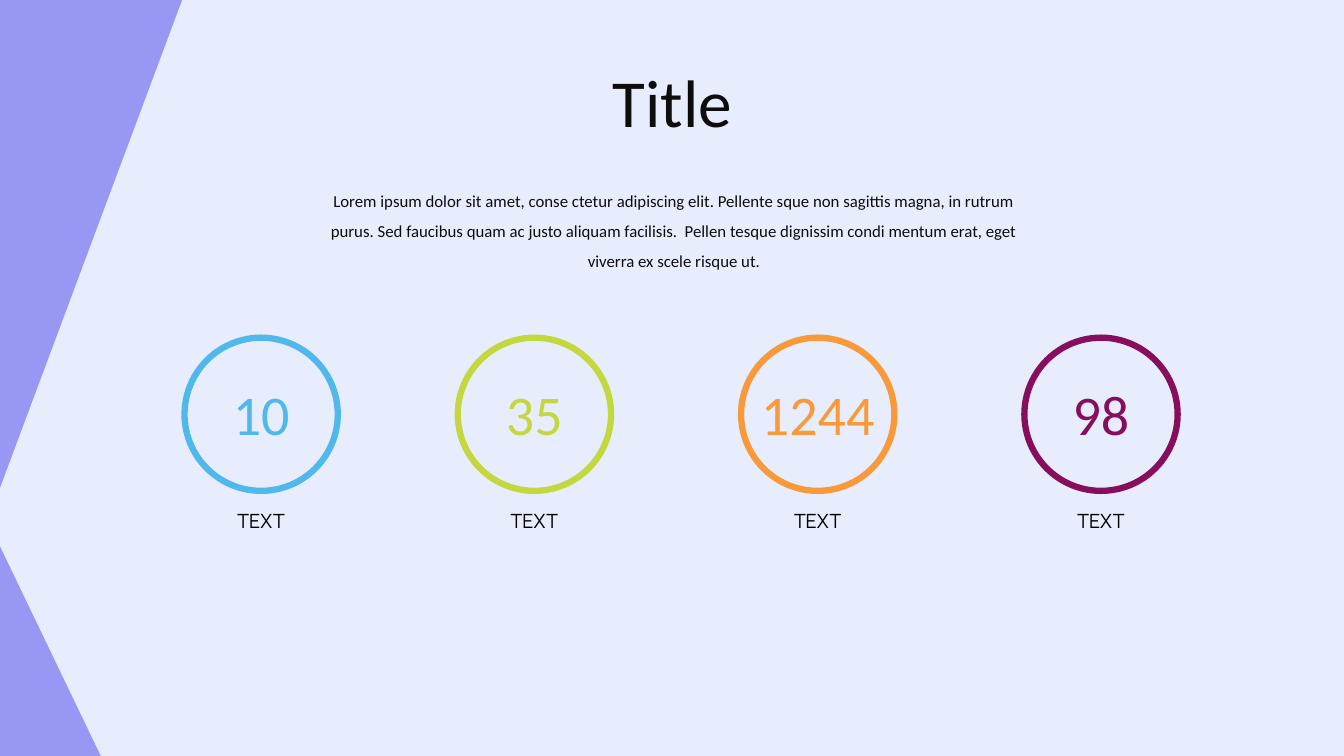
"""Build a title slide with four ringed figures and their labels."""

from dataclasses import dataclass

from pptx import Presentation
from pptx.dml.color import RGBColor
from pptx.enum.shapes import MSO_SHAPE as Preset
from pptx.enum.text import MSO_ANCHOR as Anchor, MSO_AUTO_SIZE as AutoSize, PP_ALIGN as Align
from pptx.shapes.autoshape import Shape
from pptx.slide import Slide
from pptx.util import Inches, Pt


@dataclass(frozen=True)
class Theme:
    background: str = "E7EDFD"
    accent: str = "9898F4"
    ink: str = "0D0D0D"
    label_ink: str = "000000"
    font: str = "Calibri"
    label_font: str = "Manrope"
    title_size: int = 48
    number_size: int = 40
    label_size: int = 14
    body_size: int = 12
    ring_line: float = 4.5


@dataclass(frozen=True)
class Box:
    left: float
    top: float
    width: float
    height: float

    def lengths(self) -> tuple[int, ...]:
        return tuple(Inches(value) for value in (self.left, self.top, self.width, self.height))


@dataclass(frozen=True)
class Figure:
    center: float
    number: str
    color: str
    number_width: float = 1.18
    label: str = "TEXT"


THEME = Theme()
RING_SIZE = 1.52
LABEL_WIDTH = 1.19
FIGURES = (
    Figure(2.59, "10", "51B8EB"),
    Figure(5.3, "35", "C3D83F"),
    Figure(8.11, "1244", "F89A3A", number_width=1.41),
    Figure(10.92, "98", "870E5D"),
)
BODY = (
    "Lorem ipsum dolor sit amet, conse ctetur adipiscing elit. Pellente sque non sagittis magna, "
    "in rutrum purus. Sed faucibus quam ac justo aliquam facilisis.  Pellen tesque dignissim "
    "condi mentum erat, eget viverra ex scele risque ut."
)


def centered_box(center: float, top: float, width: float, height: float) -> Box:
    return Box(center - width / 2, top, width, height)


def write_text(shape: Shape, text: str, *, size: float, color: str = THEME.ink,
               font: str = THEME.font, line_spacing: float = 1.0) -> None:
    frame = shape.text_frame
    frame.word_wrap = True
    frame.auto_size = AutoSize.SHAPE_TO_FIT_TEXT
    frame.vertical_anchor = Anchor.TOP
    frame.text = text
    paragraph = frame.paragraphs[0]
    paragraph.alignment = Align.CENTER
    paragraph.line_spacing = line_spacing
    run_font = paragraph.runs[0].font
    run_font.name = font
    run_font.size = Pt(size)
    run_font.color.rgb = RGBColor.from_string(color)


def add_text(slide: Slide, box: Box, text: str, **text_format) -> None:
    write_text(slide.shapes.add_textbox(*box.lengths()), text, **text_format)


def add_corner(slide: Slide, box: Box, flipped: bool = False) -> None:
    shape = slide.shapes.add_shape(Preset.RIGHT_TRIANGLE, *box.lengths())
    shape.shadow.inherit = False
    shape.fill.solid()
    shape.fill.fore_color.rgb = RGBColor.from_string(THEME.accent)
    shape.line.fill.background()
    if flipped:
        shape.element.spPr.xfrm.set("flipV", "1")


def add_title(slide: Slide, box: Box, text: str) -> None:
    title = slide.shapes.title
    title.left, title.top, title.width, title.height = box.lengths()
    write_text(title, text, size=THEME.title_size)


def add_figure(slide: Slide, figure: Figure) -> None:
    ring_box = centered_box(figure.center, 3.35, RING_SIZE, RING_SIZE)
    ring = slide.shapes.add_shape(Preset.OVAL, *ring_box.lengths())
    ring.shadow.inherit = False
    ring.fill.background()
    ring.line.color.rgb = RGBColor.from_string(figure.color)
    ring.line.width = Pt(THEME.ring_line)
    add_text(slide, centered_box(figure.center, 3.72, figure.number_width, 0.77), figure.number,
             size=THEME.number_size, color=figure.color)
    add_text(slide, centered_box(figure.center, 5, LABEL_WIDTH, 0.34), figure.label,
             size=THEME.label_size, color=THEME.label_ink, font=THEME.label_font)


def main() -> None:
    presentation = Presentation()
    presentation.slide_width = Inches(13.33)
    presentation.slide_height = Inches(7.5)
    slide = presentation.slides.add_slide(presentation.slide_layouts[5])
    slide.background.fill.solid()
    slide.background.fill.fore_color.rgb = RGBColor.from_string(THEME.background)
    add_corner(slide, Box(0, 5.42, 1, 2.08))
    add_corner(slide, Box(0, -0.01, 1.81, 4.85), flipped=True)
    add_title(slide, Box(3.61, 0.55, 6.12, 0.91), "Title")
    add_text(slide, Box(3.16, 1.74, 7.05, 1.01), BODY, size=THEME.body_size, line_spacing=1.5)
    for figure in FIGURES:
        add_figure(slide, figure)
    presentation.save("out.pptx")


if __name__ == "__main__":
    main()
